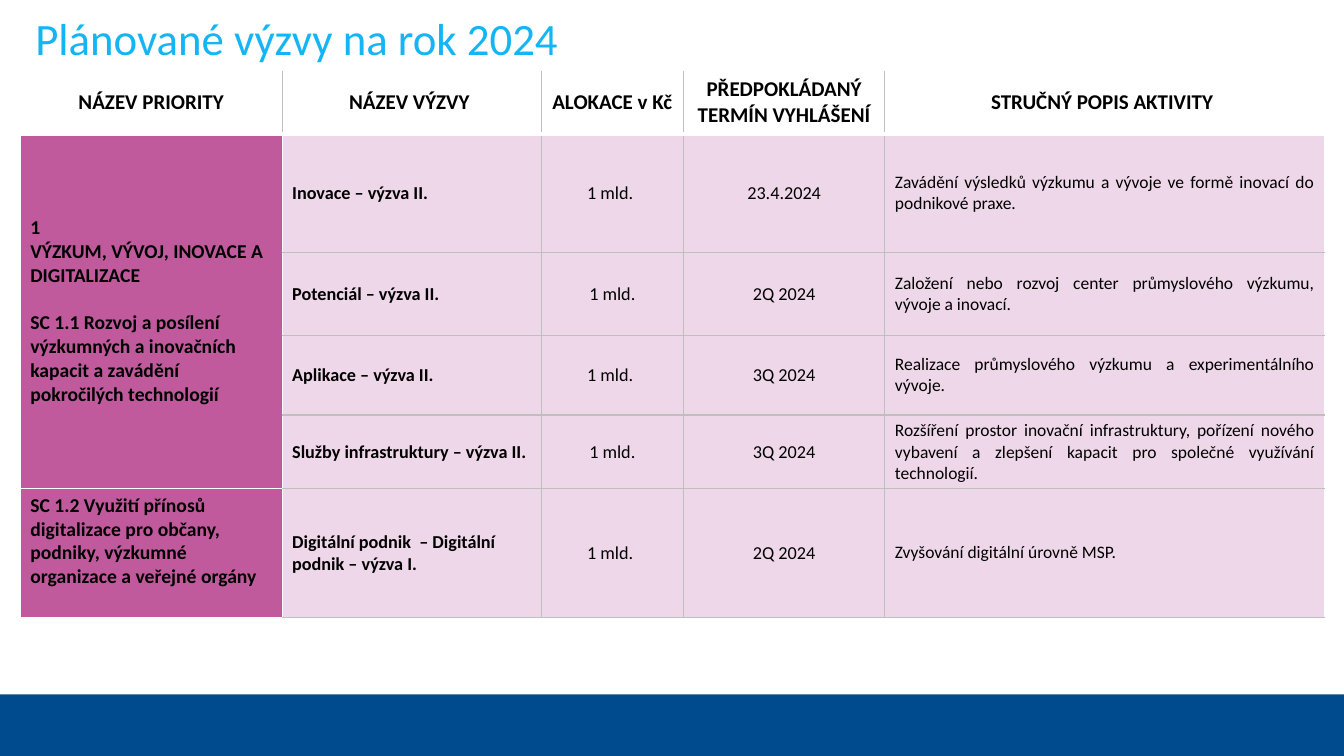
from lxml import etree
from pptx import Presentation
from pptx.dml.color import RGBColor
from pptx.enum.shapes import MSO_SHAPE
from pptx.enum.text import MSO_ANCHOR, PP_ALIGN
from pptx.oxml.ns import qn
from pptx.util import Cm, Pt

RECT = MSO_SHAPE.RECTANGLE
MIDDLE = MSO_ANCHOR.MIDDLE
LEFT, CENTER, FULL = PP_ALIGN.LEFT, PP_ALIGN.CENTER, PP_ALIGN.JUSTIFY
WHITE, GREY, BLACK = "FFFFFF", "BFBFBF", "000000"
NAVY, SKY, PLUM, PINK = "004B8D", "13B5F4", "C05A9D", "EFD7EA"


def color(code):
    return RGBColor.from_string(code)


def write(frame, text, align, code, style):
    frame.text = text
    for para in frame.paragraphs:
        para.alignment = align
        for key, value in style.items():
            setattr(para.font, key, value)
        para.font.color.rgb = color(code)


deck = Presentation()
deck.slide_width, deck.slide_height = Cm(33.87), Cm(19.05)
slide = deck.slides.add_slide(deck.slide_layouts[6])
slide.background.fill.solid()
slide.background.fill.fore_color.rgb = color(NAVY)

page = slide.shapes.add_shape(RECT, 0, 0, deck.slide_width, Cm(17.5))
page.shadow.inherit = False
page.fill.solid()
page.fill.fore_color.rgb = color(WHITE)
page.line.fill.background()

title = slide.shapes.add_textbox(Cm(0.89), Cm(0.28), Cm(30.53), Cm(1.37)).text_frame
title.word_wrap = True
for side in ("left", "top", "right", "bottom"):
    setattr(title, "margin_" + side, 0)
write(title, "Plánované výzvy na rok 2024", LEFT, SKY, {"name": "Calibri", "size": Pt(32)})

goal = (
    "1\nVÝZKUM, VÝVOJ, INOVACE A DIGITALIZACE\n"
    "SC 1.1 Rozvoj a posílení výzkumných a inovačních kapacit a zavádění pokročilých technologií"
)
rows = [
    ("NÁZEV PRIORITY", "NÁZEV VÝZVY ", "ALOKACE v Kč", "PŘEDPOKLÁDANÝ TERMÍN VYHLÁŠENÍ",
     "STRUČNÝ POPIS AKTIVITY "),
    (goal, "Inovace – výzva II.", "1 mld. ", "23.4.2024",
     "Zavádění výsledků výzkumu a vývoje ve formě inovací do podnikové praxe. "),
    ("", "Potenciál – výzva II.", "1 mld.", "2Q 2024",
     "Založení nebo rozvoj center průmyslového výzkumu, vývoje a inovací."),
    ("", "Aplikace – výzva II.", "1 mld. ", "3Q 2024",
     "Realizace průmyslového výzkumu a experimentálního vývoje. "),
    ("", "Služby infrastruktury – výzva II.", "1 mld.", "3Q 2024",
     "Rozšíření prostor inovační infrastruktury, pořízení nového vybavení a zlepšení kapacit "
     "pro společné využívání technologií."),
    ("SC 1.2 Využití přínosů digitalizace pro občany, podniky, výzkumné organizace a veřejné orgány",
     "Digitální podnik  – Digitální podnik – výzva I.", "1 mld. ", "2Q 2024",
     "Zvyšování digitální úrovně MSP. "),
]
widths = [6.6, 6.53, 3.58, 5.08, 11.07]
heights = [1.57, 3, 2.08, 2.01, 1.85, 3.25]
formats = [(LEFT, 14, True), (LEFT, 13, True), (CENTER, 13, False), (CENTER, 13, False), (FULL, 12.5, False)]

table = slide.shapes.add_table(
    len(rows), len(widths), Cm(0.51), Cm(1.8), Cm(sum(widths)), Cm(sum(heights))
).table
table.first_row = table.horz_banding = False
for col, width in zip(table.columns, widths):
    col.width = Cm(width)
for row, height in zip(table.rows, heights):
    row.height = Cm(height)

last = len(widths) - 1
for r, texts in enumerate(rows):
    for c, text in enumerate(texts):
        cell = table.cell(r, c)
        align, size, bold = formats[c] if r else (CENTER, 15, True)
        cell.vertical_anchor = MIDDLE
        write(cell.text_frame, text, align, BLACK, {"name": "Calibri", "size": Pt(size), "bold": bold})
        cell.fill.solid()
        cell.fill.fore_color.rgb = color(WHITE if r == 0 else PLUM if c == 0 else PINK)

        pale = {
            "L": c == 0 or (c == 1 and r > 0),
            "R": c == last or (c == 0 and r > 0),
            "T": r < 2 or c == 0,
            "B": r == 0 or c == 0,
        }
        props = cell._tc.get_or_add_tcPr()
        for spot, (side, light) in enumerate(pale.items()):
            line = etree.Element(qn("a:ln" + side))
            line.set("w", str(Pt(3 if r == 0 and side == "B" else 1)))
            fill = etree.SubElement(line, qn("a:solidFill"))
            etree.SubElement(fill, qn("a:srgbClr")).set("val", WHITE if light else GREY)
            props.insert(spot, line)

table.cell(1, 0).merge(table.cell(4, 0))
table.cell(1, 0).text_frame.paragraphs[2].space_before = Pt(17)
table.cell(5, 0).margin_bottom = Cm(0.73)

deck.save("out.pptx")
